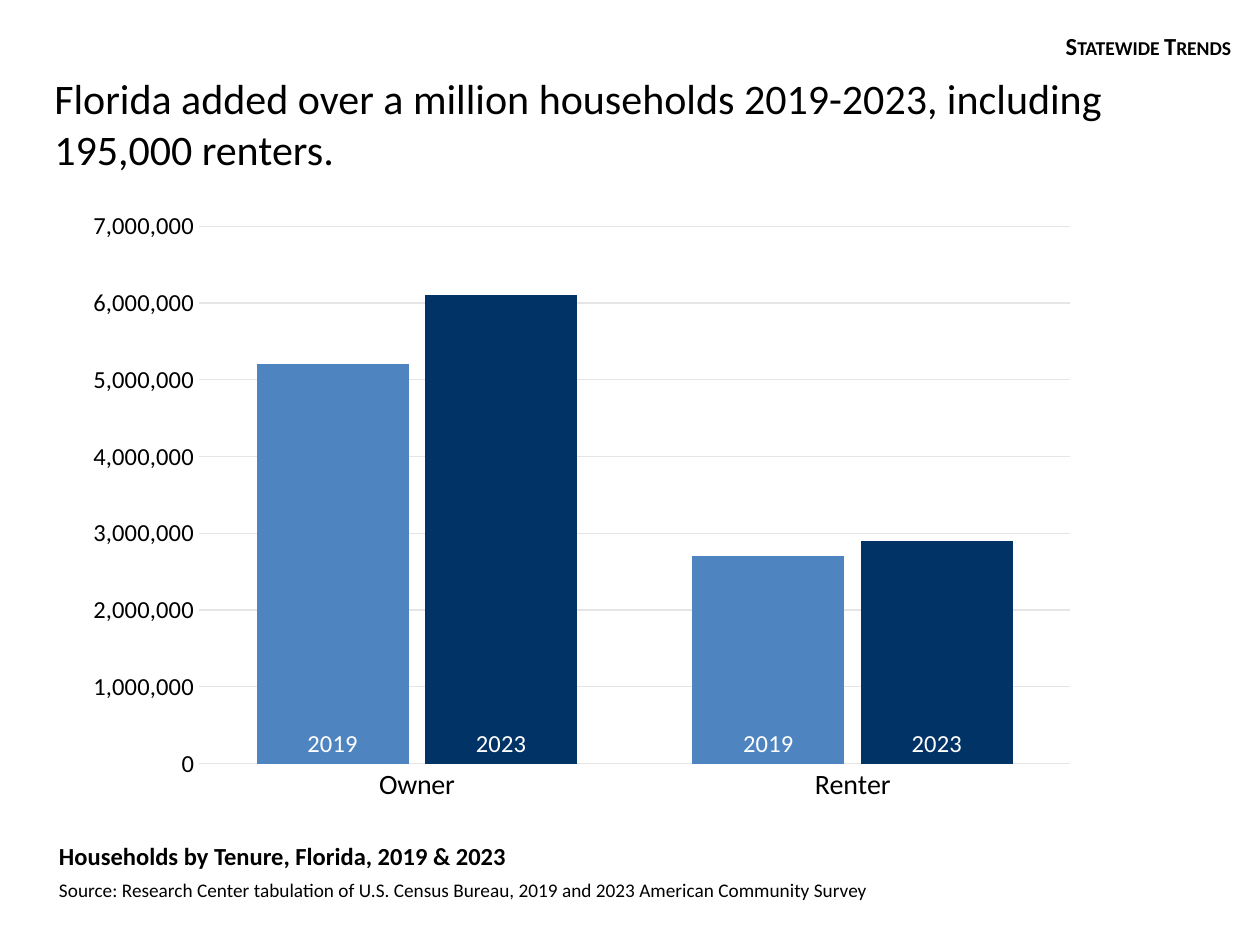
from dataclasses import dataclass
from typing import NamedTuple

from pptx import Presentation
from pptx.chart.data import CategoryChartData
from pptx.dml.color import RGBColor as Rgb
from pptx.enum.chart import XL_CHART_TYPE as ChartType
from pptx.enum.chart import XL_LABEL_POSITION as LabelPosition
from pptx.enum.chart import XL_TICK_MARK as TickMark
from pptx.enum.text import MSO_ANCHOR as Anchor
from pptx.enum.text import MSO_AUTO_SIZE as AutoSize
from pptx.enum.text import PP_ALIGN as Align
from pptx.util import Cm, Pt


@dataclass(frozen=True)
class Theme:
    font: str = "Calibri"
    text: Rgb = Rgb(0x00, 0x00, 0x00)
    chart_text: Rgb = Rgb(0x54, 0x54, 0x54)
    label: Rgb = Rgb(0xFF, 0xFF, 0xFF)
    grid: Rgb = Rgb(0xE5, 0xE5, 0xE5)
    bars: tuple = (Rgb(0x4E, 0x85, 0xC0), Rgb(0x02, 0x33, 0x66))
    title_size: Pt = Pt(24)
    category_size: Pt = Pt(16)
    body_size: Pt = Pt(14)
    small_size: Pt = Pt(11)
    line: Pt = Pt(0.75)


class Box(NamedTuple):
    """Left, top, width and height in centimetres."""
    left: float
    top: float
    width: float
    height: float

    def lengths(self):
        return [Cm(value) for value in self]


THEME = Theme()
HOUSEHOLDS = {"2019": (5200000, 2700000), "2023": (6100000, 2900000)}


def set_font(font, size, color=THEME.text, bold=False):
    font.name, font.size, font.bold = THEME.font, size, bold
    font.color.rgb = color


def add_text(page, box, text, size, bold=False, wrap=True):
    frame = page.shapes.add_textbox(*box.lengths()).text_frame
    frame.word_wrap = wrap
    frame.auto_size = AutoSize.SHAPE_TO_FIT_TEXT
    para = frame.paragraphs[0]
    para.text = text
    set_font(para.font, size, bold=bold)
    return para


def add_title(page, box, text):
    title = page.shapes.title
    title.left, title.top, title.width, title.height = box.lengths()
    frame = title.text_frame
    frame.text = text
    frame.word_wrap = True
    frame.auto_size = AutoSize.NONE
    frame.vertical_anchor = Anchor.BOTTOM
    para = frame.paragraphs[0]
    para.alignment = Align.LEFT
    set_font(para.font, THEME.title_size)


def add_section_tag(page, box, text):
    para = add_text(page, box, text, THEME.body_size, bold=True, wrap=False)
    para.alignment = Align.RIGHT
    para.space_before = Pt(6)
    # Small capitals
    para.runs[0].font.bold = True
    para.runs[0].font._element.set("cap", "small")


def add_household_chart(page, box):
    data = CategoryChartData(number_format="#,##0")
    data.categories = ["Owner", "Renter"]
    for year, counts in HOUSEHOLDS.items():
        data.add_series(year, counts)
    chart = page.shapes.add_chart(
        ChartType.COLUMN_CLUSTERED, *box.lengths(), data).chart
    chart.has_title = chart.has_legend = False
    set_font(chart.font, THEME.small_size, THEME.chart_text)

    # Bars, each named by its year at the base
    plot = chart.plots[0]
    plot.vary_by_categories = False
    plot.gap_width, plot.overlap = 76, -11
    for series, color in zip(plot.series, THEME.bars):
        series.format.fill.solid()
        series.format.fill.fore_color.rgb = color
        labels = series.data_labels
        labels.show_series_name, labels.show_value = True, False
        labels.number_format = "#,##0"
        labels.number_format_is_linked = False
        labels.position = LabelPosition.INSIDE_BASE
        set_font(labels.font, THEME.body_size, THEME.label)

    # Axes and gridlines
    categories, values = chart.category_axis, chart.value_axis
    for axis, size in ((categories, THEME.category_size),
                       (values, THEME.body_size)):
        axis.major_tick_mark = axis.minor_tick_mark = TickMark.NONE
        set_font(axis.tick_labels.font, size)
    values.minimum_scale, values.maximum_scale = 0, 7000000
    values.major_unit = 1000000
    values.tick_labels.number_format = "#,##0"
    values.tick_labels.number_format_is_linked = False
    values.format.line.fill.background()
    for line in (categories.format.line, values.major_gridlines.format.line):
        line.color.rgb = THEME.grid
        line.width = THEME.line


def add_caption(page, box, heading, source):
    heading_box = box._replace(height=0.89)
    para = add_text(page, heading_box, heading, THEME.body_size, bold=True)
    para.line_spacing = 1.12
    para.space_before = para.space_after = Pt(10)
    source_box = Box(box.left, box.top + 0.82, box.width, box.height - 0.82)
    add_text(page, source_box, source, THEME.small_size)


def main():
    deck = Presentation()
    deck.slide_width, deck.slide_height = Cm(25.4), Cm(19.05)
    page = deck.slides.add_slide(deck.slide_layouts.get_by_name("Title Only"))
    add_title(page, Box(0.84, 1.22, 23.72, 2.41),
              "Florida added over a million households 2019-2023, "
              "including 195,000 renters.")
    add_caption(page, Box(0.94, 16.76, 17.68, 1.56),
                "Households by Tenure, Florida, 2019 & 2023",
                "Source: Research Center tabulation of U.S. Census Bureau, "
                "2019 and 2023 American Community Survey")
    add_section_tag(page, Box(21.13, 0.51, 3.94, 0.86), "Statewide Trends")
    add_household_chart(page, Box(1.47, 4.01, 20.52, 12.42))
    deck.save("out.pptx")


if __name__ == "__main__":
    main()
